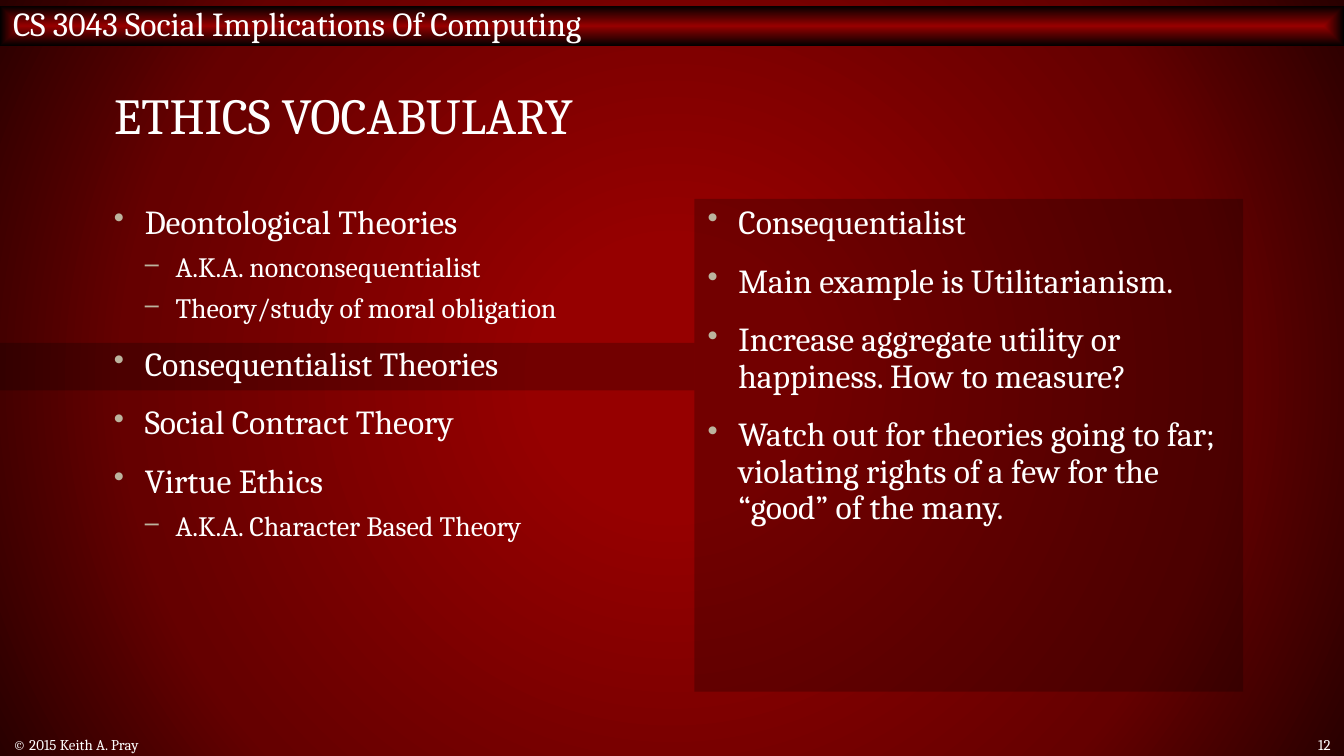
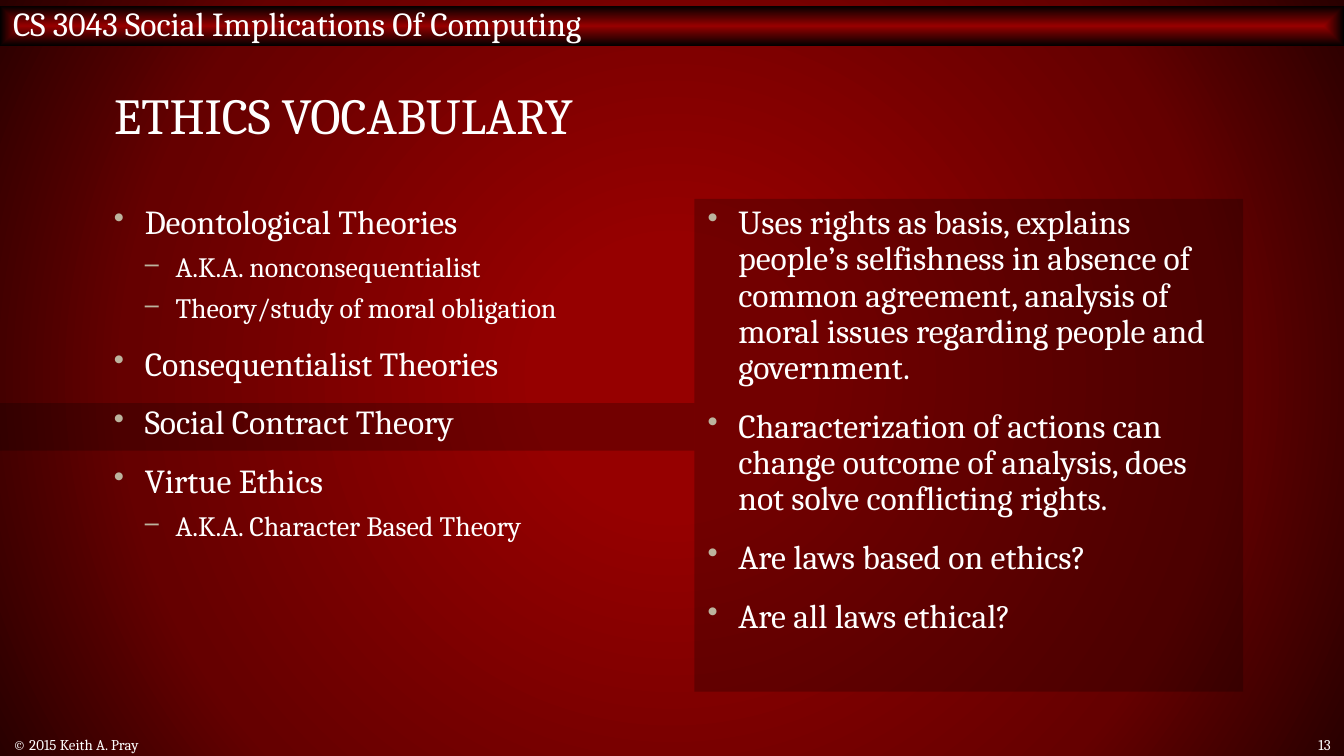
from lxml import etree
from pptx import Presentation
from pptx import util as u
from pptx.dml.color import RGBColor
from pptx.enum import shapes, text
from pptx.oxml.ns import qn

PX = 9525
FONT = "Cambria"
WHITE = RGBColor(0xFF, 0xFF, 0xFF)
BLACK = RGBColor(0x00, 0x00, 0x00)
RED = RGBColor(0x96, 0x00, 0x00)
MID = RGBColor(0x65, 0x00, 0x00)
DARK = RGBColor(0x29, 0x00, 0x00)
SAND = RGBColor(0xBC, 0xB4, 0x9E)

PAGE = (0, 0, 960, 540)
HEAD = (0, 4, 960, 29)
TITLE = (72, 38, 816, 96)
LEFT = (72, 142, 392, 352)
RIGHT = (496, 142, 392, 352)
FOOT = (0, 524, 960, 16)
MARK = 34
HANG = 22
LEVELS = [("•", 18, 12), ("–", 15, 6)]

TERMS = [
    (0, "Deontological Theories"),
    (1, "A.K.A. nonconsequentialist"),
    (1, "Theory/study of moral obligation"),
    (0, "Consequentialist Theories"),
    (0, "Social Contract Theory"),
    (0, "Virtue Ethics"),
    (1, "A.K.A. Character Based Theory"),
]
SLIDES = [
    ("12", 103, [
        "Consequentialist",
        "Main example is Utilitarianism.",
        "Increase aggregate utility or happiness. How to measure?",
        "Watch out for theories going to far; violating rights of a few "
        "for the “good” of the many.",
    ]),
    ("13", 146, [
        "Uses rights as basis, explains people’s selfishness in absence of "
        "common agreement, analysis of moral issues regarding people and "
        "government.",
        "Characterization of actions can change outcome of analysis, does "
        "not solve conflicting rights.",
        "Are laws based on ethics?",
        "Are all laws ethical?",
    ]),
]


def emu(box):
    return [n * PX for n in box]


def add(parent, tag, **attrs):
    return etree.SubElement(parent, qn(tag), attrs)


def shade(fill, owner, form, stops):
    fill.gradient()
    node = next(owner.iter(qn("a:gradFill")))
    node.clear()
    node.set("rotWithShape", "1")
    group = add(node, "a:gsLst")
    for pos, tone in stops:
        stop = add(group, "a:gs", pos=str(pos * 1000))
        add(stop, "a:srgbClr", val=str(tone))
    focus = add(node, "a:path", path=form)
    add(focus, "a:fillToRect", l="50000", t="50000", r="50000", b="50000")


def style(para, size):
    for run in para.runs:
        run.font.name = FONT
        run.font.size = u.Pt(size)
        run.font.color.rgb = WHITE


def write(shape, words, size, align=text.PP_ALIGN.LEFT):
    frame = shape.text_frame
    frame.word_wrap = True
    frame.vertical_anchor = text.MSO_ANCHOR.MIDDLE
    frame.text = words
    para = frame.paragraphs[0]
    para.alignment = align
    style(para, size)
    return para


def block(slide, box):
    shape = slide.shapes.add_shape(shapes.MSO_SHAPE.RECTANGLE, *emu(box))
    shape.shadow.inherit = False
    shape.line.fill.background()
    return shape


def veil(slide, box):
    shape = block(slide, box)
    shape.fill.solid()
    shape.fill.fore_color.rgb = BLACK
    tone = next(shape.element.iter(qn("a:srgbClr")))
    add(tone, "a:alpha", val="24000")


def header(slide, box):
    bar = block(slide, box)
    shade(bar.fill, bar.element, "shape", [(0, RED), (100, BLACK)])
    write(bar, "CS 3043 Social Implications Of Computing", 18)
    bar.text_frame.margin_top = 0


def title(slide, box):
    shape = slide.shapes.title
    shape.left, shape.top, shape.width, shape.height = emu(box)
    para = write(shape, "ETHICS VOCABULARY", 27)
    para.line_spacing = 0.8


def bullets(slide, box, items):
    frame = slide.shapes.add_textbox(*emu(box)).text_frame
    frame.word_wrap = True
    for i, (level, words) in enumerate(items):
        para = frame.add_paragraph() if i else frame.paragraphs[0]
        sign, size, gap = LEVELS[level]
        para.text = words
        para.level = level
        props = para._p.get_or_add_pPr()
        props.set("marL", str((level + 1) * HANG * PX))
        props.set("indent", str(-HANG * PX))
        tint = add(props, "a:buClr")
        add(tint, "a:srgbClr", val=str(SAND))
        add(props, "a:buSzPct", val="90000")
        add(props, "a:buChar", char=sign)
        para.line_spacing = 0.9
        para.space_before = u.Pt(gap if i else 0)
        style(para, size)


def footer(slide, box, page):
    x, y, w, h = box
    side = 65
    note = slide.shapes.add_textbox(*emu((x, y, 584, h)))
    write(note, "© 2015 Keith A. Pray", 8)
    count = slide.shapes.add_textbox(*emu((x + w - side, y, side, h)))
    write(count, page, 8, text.PP_ALIGN.RIGHT)


def lesson(deck, page, drop, points):
    slide = deck.slides.add_slide(deck.slide_layouts[5])
    header(slide, HEAD)
    x, y, w, h = RIGHT
    veil(slide, (0, y + drop, x, MARK))
    veil(slide, RIGHT)
    title(slide, TITLE)
    bullets(slide, LEFT, TERMS)
    bullets(slide, RIGHT, [(0, point) for point in points])
    footer(slide, FOOT, page)


def main():
    deck = Presentation()
    deck.slide_width, deck.slide_height = emu(PAGE)[2:]
    master = deck.slide_master
    shade(master.background.fill, master.element, "circle",
          [(17, RED), (71, MID), (100, DARK)])
    for page, drop, points in SLIDES:
        lesson(deck, page, drop, points)
    deck.save("out.pptx")


if __name__ == "__main__":
    main()
